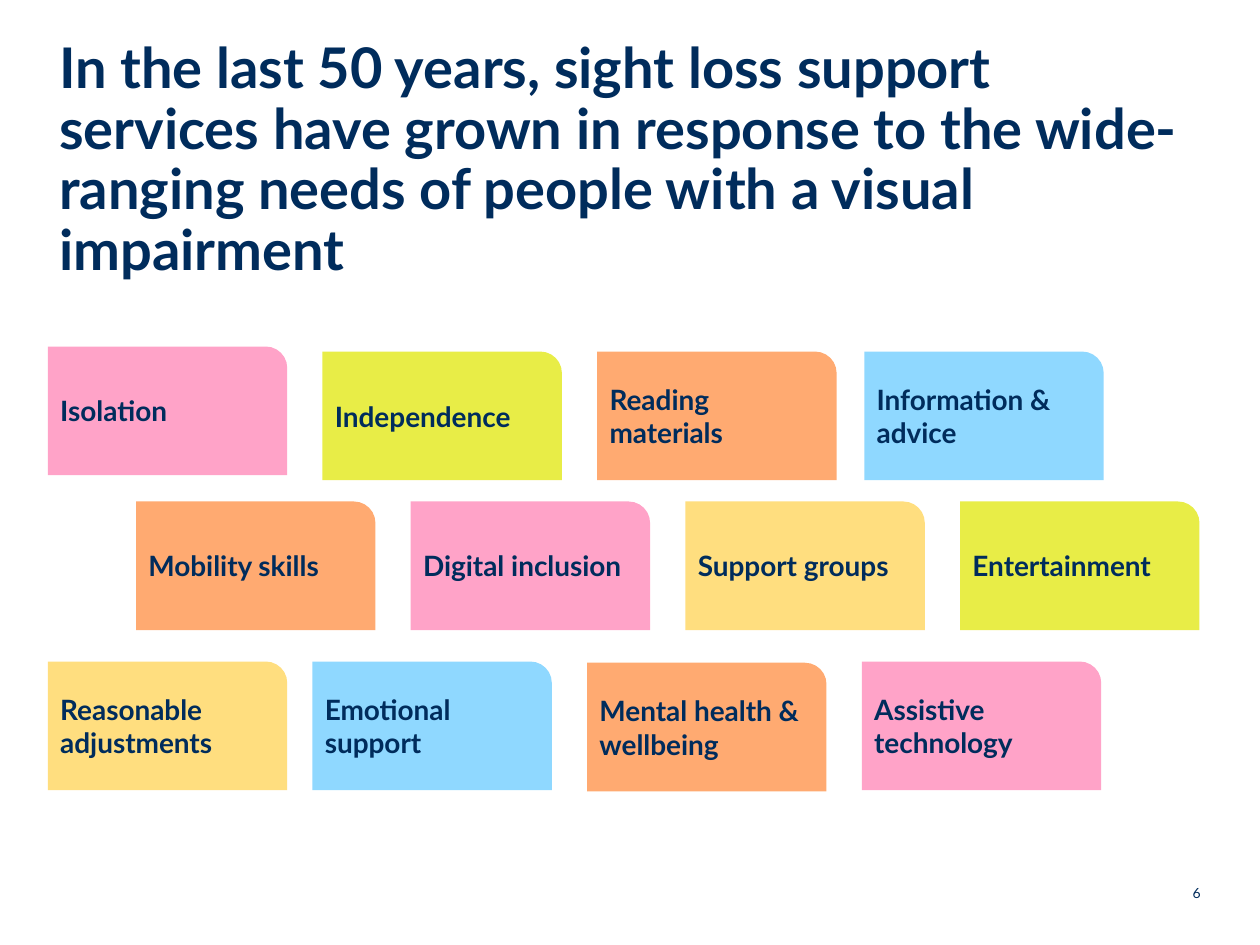
from dataclasses import dataclass
from pptx import Presentation
from pptx.dml.color import RGBColor
from pptx.enum.shapes import MSO_SHAPE
from pptx.enum.text import MSO_ANCHOR, PP_ALIGN
from pptx.util import Inches, Pt


@dataclass(frozen=True)
class Theme:
    font: str = "Lato"
    navy: str = "002C5C"
    white: str = "FFFFFF"
    pink: str = "FFA3C8"
    lime: str = "E8ED47"
    peach: str = "FFAA71"
    sky: str = "8FD8FF"
    gold: str = "FFDE7F"
    title: int = 32
    label: int = 16
    small: int = 8


THEME = Theme()
CARD = (1.9, 1.02)
ROWS = [
    [(0.38, 2.75, "Isolation", THEME.pink),
     (2.56, 2.79, "Independence", THEME.lime),
     (4.74, 2.79, "Reading materials", THEME.peach),
     (6.86, 2.79, "Information & advice", THEME.sky)],
    [(1.08, 3.98, "Mobility skills", THEME.peach),
     (3.26, 3.98, "Digital inclusion", THEME.pink),
     (5.44, 3.98, "Support groups", THEME.gold),
     (7.62, 3.98, "Entertainment", THEME.lime)],
    [(0.38, 5.25, "Reasonable adjustments", THEME.gold),
     (2.48, 5.25, "Emotional support", THEME.sky),
     (4.66, 5.26, "Mental health & wellbeing", THEME.peach),
     (6.84, 5.25, "Assistive technology", THEME.pink)],
]


def write(shape, text, size, bold, inset=0, align=PP_ALIGN.LEFT):
    frame = shape.text_frame
    frame.word_wrap = True
    frame.margin_left = frame.margin_right = Inches(inset)
    frame.margin_top = frame.margin_bottom = Inches(inset)
    para = frame.paragraphs[0]
    para.alignment = align
    run = para.add_run()
    run.text = text
    run.font.name = THEME.font
    run.font.size = Pt(size)
    run.font.bold = bold
    run.font.color.rgb = RGBColor.from_string(THEME.navy)
    return frame


def add_title(slide, box, text):
    shape = slide.shapes.add_textbox(*map(Inches, box))
    frame = write(shape, text, THEME.title, True)
    frame.paragraphs[0].line_spacing = 0.9


def add_number(slide, box, text):
    shape = slide.shapes.add_textbox(*map(Inches, box))
    write(shape, text, THEME.small, False, align=PP_ALIGN.RIGHT)


def add_card(slide, box, text, color):
    shape = slide.shapes.add_shape(
        MSO_SHAPE.ROUND_1_RECTANGLE, *map(Inches, box))
    shape.shadow.inherit = False
    shape.adjustments[0] = 0.167
    shape.fill.solid()
    shape.fill.fore_color.rgb = RGBColor.from_string(color)
    shape.line.fill.background()
    frame = write(shape, text, THEME.label, True, inset=0.1)
    frame.vertical_anchor = MSO_ANCHOR.MIDDLE


def add_cards(slide, rows):
    for row in rows:
        for left, top, text, color in row:
            add_card(slide, (left, top, *CARD), text, color)


def main():
    deck = Presentation()
    deck.slide_width = Inches(10)
    deck.slide_height = Inches(7.5)
    slide = deck.slides.add_slide(deck.slide_layouts[6])
    slide.background.fill.solid()
    slide.background.fill.fore_color.rgb = RGBColor.from_string(THEME.white)
    add_title(slide, (0.47, 0.32, 9.07, 1.02),
              "In the last 50 years, sight loss support services have grown "
              "in response to the wide-ranging needs of people with a visual "
              "impairment")
    add_number(slide, (9.22, 7.02, 0.31, 0.17), "6")
    add_cards(slide, ROWS)
    deck.save("out.pptx")


if __name__ == "__main__":
    main()
